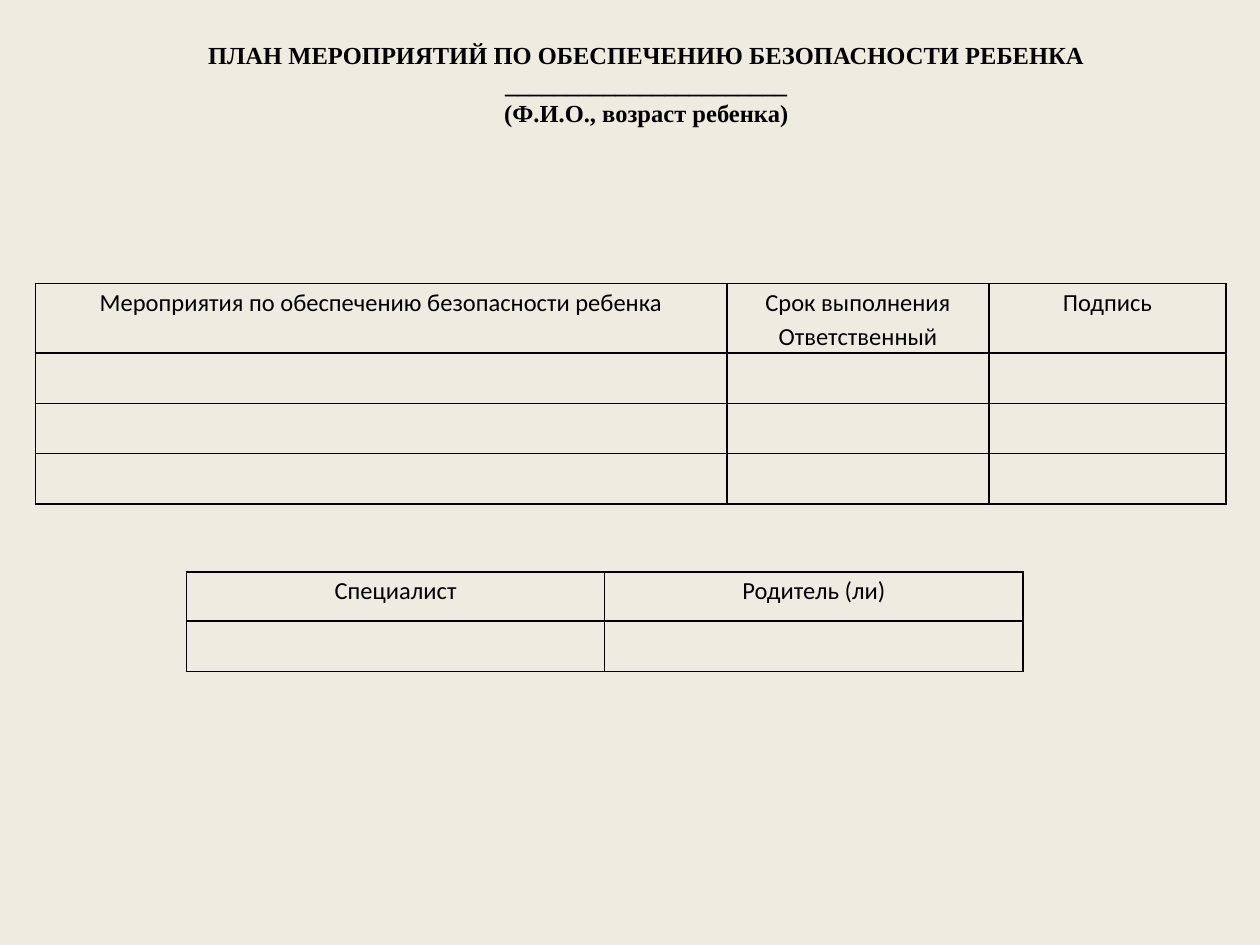
import pptx
import pptx.dml.color
import pptx.enum.text
import pptx.oxml
import pptx.oxml.ns
import pptx.util
from pptx.util import Inches


def colour(value):
    return pptx.dml.color.RGBColor.from_string(value)


class SafetyPlan:
    """Style of the form and the page being filled."""

    INK = "000000"
    PAPER = "EEECE1"
    TITLE_FONT = "Times New Roman"
    TABLE_FONT = "Calibri"
    TEXT_SIZE = 14
    BORDER_WIDTH = 1

    def __init__(self, deck):
        self.page = deck.slides.add_slide(deck.slide_layouts[5])
        fill = self.page.background.fill
        fill.solid()
        fill.fore_color.rgb = colour(self.PAPER)

    def add_span(self, para, text, font, bold=False):
        para.alignment = pptx.enum.text.PP_ALIGN.CENTER
        span = para.add_run()
        span.text = text
        span.font.name = font
        span.font.size = pptx.util.Pt(self.TEXT_SIZE)
        span.font.bold = bold
        span.font.color.rgb = colour(self.INK)

    def title(self, lines, left, top, width, height):
        box = self.page.shapes.title
        box.left, box.top = Inches(left), Inches(top)
        box.width, box.height = Inches(width), Inches(height)
        frame = box.text_frame
        frame.word_wrap = False
        frame.auto_size = pptx.enum.text.MSO_AUTO_SIZE.SHAPE_TO_FIT_TEXT
        frame.vertical_anchor = pptx.enum.text.MSO_ANCHOR.MIDDLE
        for index, line in enumerate(lines):
            para = frame.add_paragraph() if index else frame.paragraphs[0]
            self.add_span(para, line, self.TITLE_FONT, bold=True)

    def border(self, cell):
        properties = cell._tc.get_or_add_tcPr()
        width = pptx.util.Pt(self.BORDER_WIDTH)
        # Borders come before the fill in the cell properties
        for position, side in enumerate(("lnL", "lnR", "lnT", "lnB")):
            properties.insert(position, pptx.oxml.parse_xml(
                f'<a:{side} {pptx.oxml.ns.nsdecls("a")} w="{width}"><a:solidFill>'
                f'<a:srgbClr val="{self.INK}"/></a:solidFill></a:{side}>'))

    def table(self, headings, left, top, column_widths, row_heights):
        table = self.page.shapes.add_table(
            len(row_heights), len(column_widths), Inches(left), Inches(top),
            Inches(sum(column_widths)), Inches(sum(row_heights))).table
        table.first_row = table.horz_banding = False
        for column, width in zip(table.columns, column_widths):
            column.width = Inches(width)
        for row, height in zip(table.rows, row_heights):
            row.height = Inches(height)
        for cell in table.iter_cells():
            cell.fill.background()
            self.border(cell)
        for cell, heading in zip(table.rows[0].cells, headings):
            cell.margin_left = cell.margin_right = Inches(0.07)
            cell.margin_top = cell.margin_bottom = 0
            para = cell.text_frame.paragraphs[0]
            para.line_spacing = 1.15
            self.add_span(para, heading, self.TABLE_FONT)


def main():
    deck = pptx.Presentation()
    deck.slide_width, deck.slide_height = Inches(10), Inches(7.5)
    plan = SafetyPlan(deck)

    # Title with the line for the child's name
    plan.title(["ПЛАН МЕРОПРИЯТИЙ ПО ОБЕСПЕЧЕНИЮ БЕЗОПАСНОСТИ РЕБЕНКА",
                "_" * 23,
                "(Ф.И.О., возраст ребенка)"], 1.48, 0.26, 7.3, 0.81)

    # Measures to be taken
    plan.table(["Мероприятия по обеспечению безопасности ребенка",
                "Срок выполнения Ответственный",
                "Подпись"], 0.28, 2.25, [5.49, 2.08, 1.88], [0.55] + [0.4] * 3)

    # Signatures
    plan.table(["Специалист", "Родитель (ли)"], 1.48, 4.54, [3.32] * 2, [0.39] * 2)

    deck.save("out.pptx")


if __name__ == "__main__":
    main()
